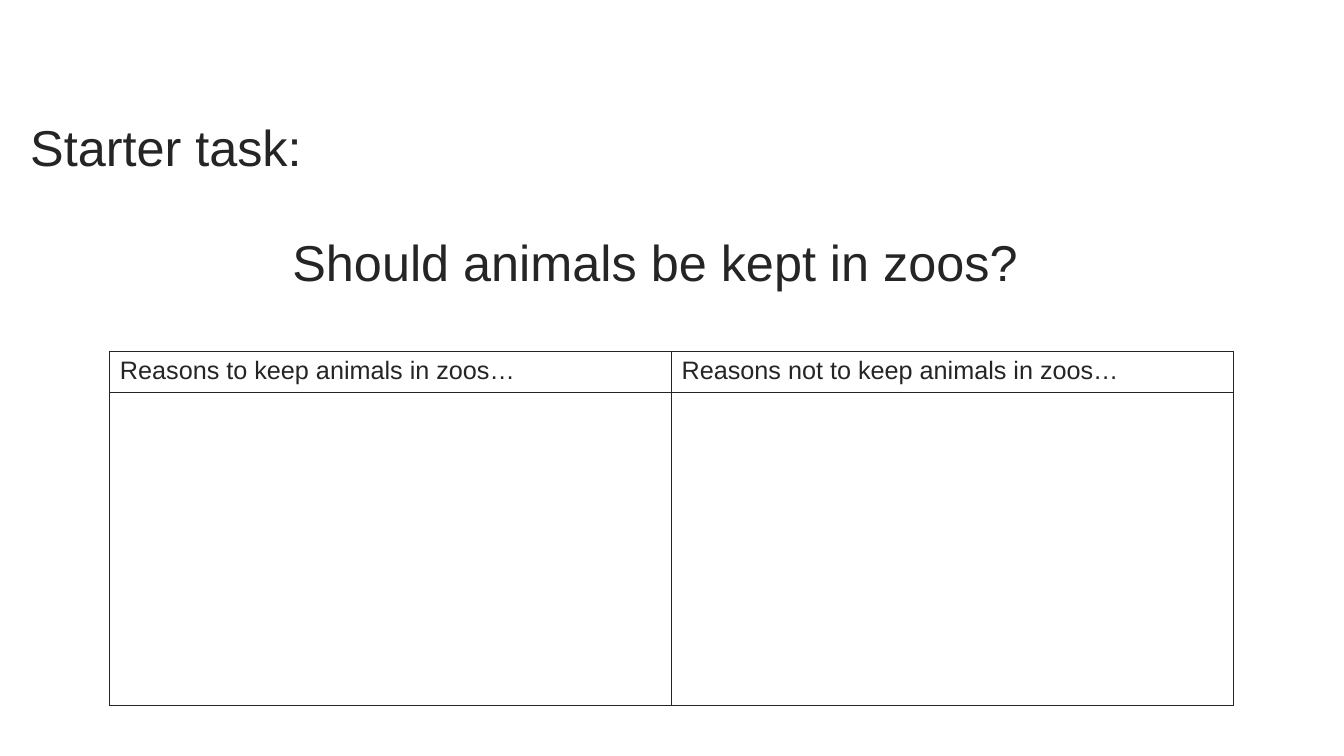
from dataclasses import dataclass

from lxml import etree
from pptx import Presentation
from pptx.dml.color import RGBColor
from pptx.enum.text import MSO_ANCHOR, MSO_AUTO_SIZE, PP_ALIGN
from pptx.oxml.ns import qn
from pptx.slide import Slide
from pptx.table import _Cell
from pptx.text.text import TextFrame
from pptx.util import Pt

LEFT, CENTER = PP_ALIGN.LEFT, PP_ALIGN.CENTER
MIDDLE = MSO_ANCHOR.MIDDLE
NO_FIT, GROW = MSO_AUTO_SIZE.NONE, MSO_AUTO_SIZE.SHAPE_TO_FIT_TEXT
INK = "252525"
FONT = "Arial"
HEADING_SIZE = 36
TABLE_SIZE = 18
BORDER_WIDTH = 1
COLUMN_WIDTH = 401.2
ROW_HEIGHTS = (29.2, 223.5)
REASONS = ("Reasons to keep animals in zoos…", "Reasons not to keep animals in zoos…")


@dataclass
class Area:
    left: float
    top: float
    width: float
    height: float

    def lengths(self) -> tuple[Pt, Pt, Pt, Pt]:
        return Pt(self.left), Pt(self.top), Pt(self.width), Pt(self.height)


TITLE_AREA = Area(14.4, 79.2, 915.8, 56.9)
QUESTION_AREA = Area(87.1, 161.3, 761.8, 51.1)
TABLE_AREA = Area(78.5, 251.3, COLUMN_WIDTH * len(REASONS), sum(ROW_HEIGHTS))


def color(code: str) -> RGBColor:
    return RGBColor.from_string(code)


def write(frame: TextFrame, text: str, size: float, align: PP_ALIGN = LEFT) -> None:
    frame.word_wrap = True
    frame.text = text
    para = frame.paragraphs[0]
    para.alignment = align
    para.font.name = FONT
    para.font.size = Pt(size)
    para.font.color.rgb = color(INK)


def add_borders(cell: _Cell) -> None:
    properties = cell._tc.get_or_add_tcPr()
    for position, side in enumerate(("lnL", "lnR", "lnT", "lnB")):
        line = etree.Element(qn(f"a:{side}"), w=str(Pt(BORDER_WIDTH)))
        fill = etree.SubElement(line, qn("a:solidFill"))
        etree.SubElement(fill, qn("a:srgbClr"), val=INK)
        properties.insert(position, line)


def add_title(page: Slide) -> None:
    title = page.shapes.title
    title.left, title.top, title.width, title.height = TITLE_AREA.lengths()
    write(title.text_frame, "Starter task:", HEADING_SIZE)
    title.text_frame.auto_size = NO_FIT
    title.text_frame.vertical_anchor = MIDDLE
    title.text_frame.paragraphs[0].line_spacing = 0.9


def add_question(page: Slide) -> None:
    frame = page.shapes.add_textbox(*QUESTION_AREA.lengths()).text_frame
    write(frame, "Should animals be kept in zoos?", HEADING_SIZE, CENTER)
    frame.auto_size = GROW


def add_reasons_table(page: Slide) -> None:
    table = page.shapes.add_table(
        len(ROW_HEIGHTS), len(REASONS), *TABLE_AREA.lengths()
    ).table
    table.first_row = False
    table.horz_banding = False
    for column in table.columns:
        column.width = Pt(COLUMN_WIDTH)
    for row, height in zip(table.rows, ROW_HEIGHTS):
        row.height = Pt(height)
    for cell in table.iter_cells():
        cell.fill.background()
        add_borders(cell)
    for cell, reason in zip(table.rows[0].cells, REASONS):
        write(cell.text_frame, reason, TABLE_SIZE)


def main() -> None:
    deck = Presentation()
    deck.slide_width, deck.slide_height = Pt(960), Pt(540)
    page = deck.slides.add_slide(deck.slide_layouts.get_by_name("Title Only"))
    add_title(page)
    add_question(page)
    add_reasons_table(page)
    deck.save("out.pptx")


if __name__ == "__main__":
    main()
